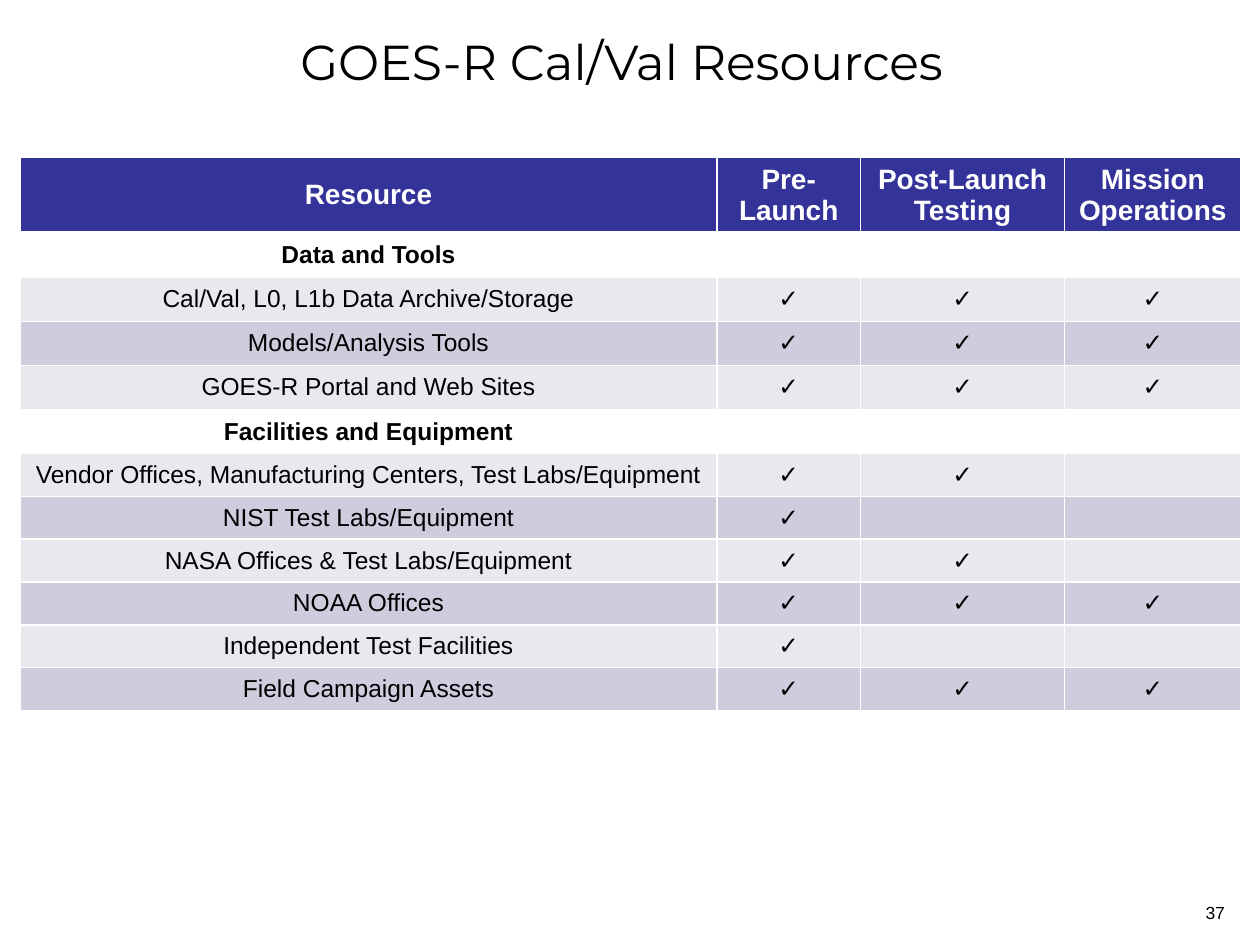
"""Build the GOES-R calibration and validation resources slide."""
from dataclasses import dataclass

from lxml import etree
from pptx import Presentation
from pptx.dml.color import RGBColor
from pptx.enum.text import MSO_ANCHOR, MSO_AUTO_SIZE, PP_ALIGN
from pptx.oxml.ns import qn
from pptx.util import Inches, Pt

CENTER, RIGHT = PP_ALIGN.CENTER, PP_ALIGN.RIGHT
MIDDLE, NO_AUTOFIT = MSO_ANCHOR.MIDDLE, MSO_AUTO_SIZE.NONE
TITLE_ONLY = 5

BLACK = RGBColor(0x00, 0x00, 0x00)
WHITE = RGBColor(0xFF, 0xFF, 0xFF)
NAVY = RGBColor(0x33, 0x33, 0x99)
PALE = RGBColor(0xE8, 0xE8, 0xEF)
LAVENDER = RGBColor(0xCD, 0xCD, 0xDE)

HEADINGS = ["Resource", "Pre-Launch", "Post-Launch Testing", "Mission Operations"]
COLUMN_WIDTHS = [5.53, 1.14, 1.62, 1.4]
ROW_HEIGHTS = [0.6] + [0.35] * 5 + [0.34] * 6
CHECK = "✓"


@dataclass(frozen=True)
class Resource:
    """One table row: its name and the number of phases it serves."""
    name: str
    phases: int = 0

    @property
    def is_section(self) -> bool:
        return self.phases == 0


RESOURCES = [
    Resource("Data and Tools"),
    Resource("Cal/Val, L0, L1b Data Archive/Storage", 3),
    Resource("Models/Analysis Tools", 3),
    Resource("GOES-R Portal and Web Sites", 3),
    Resource("Facilities and Equipment"),
    Resource("Vendor Offices, Manufacturing Centers, Test Labs/Equipment", 2),
    Resource("NIST Test Labs/Equipment", 1),
    Resource("NASA Offices & Test Labs/Equipment", 2),
    Resource("NOAA Offices", 3),
    Resource("Independent Test Facilities", 1),
    Resource("Field Campaign Assets", 3),
]


def write_text(frame, text: str, *, size: float, font: str = "Arial",
               color: RGBColor = BLACK, bold: bool = False, align=CENTER) -> None:
    """Put one formatted paragraph into a text frame."""
    para = frame.paragraphs[0]
    para.alignment = align
    if not text:
        etree.SubElement(para._p, qn("a:endParaRPr"), sz=str(int(size * 100)))
        return
    span = para.add_run()
    span.text = text
    span.font.name = font
    span.font.size = Pt(size)
    span.font.bold = bold
    span.font.color.rgb = color


def add_borders(cell, *, top: float = 1, bottom: float = 1) -> None:
    """Draw white borders around a cell, with widths in points."""
    properties = cell._tc.get_or_add_tcPr()
    for side, width in (("L", 1), ("R", 1), ("T", top), ("B", bottom)):
        line = etree.SubElement(properties, qn(f"a:ln{side}"), w=str(Pt(width)))
        fill = etree.SubElement(line, qn("a:solidFill"))
        etree.SubElement(fill, qn("a:srgbClr"), val=str(WHITE))


def fill_cell(cell, text: str, *, fill: RGBColor | None, top: float = 1,
              bottom: float = 1, **text_format) -> None:
    """Format a table cell and write its text."""
    add_borders(cell, top=top, bottom=bottom)
    if fill is None:
        cell.fill.background()
    else:
        cell.fill.solid()
        cell.fill.fore_color.rgb = fill
    cell.vertical_anchor = MIDDLE
    write_text(cell.text_frame, text, **text_format)


def add_resource_table(page) -> None:
    """Add the table of resources by mission phase."""
    table = page.shapes.add_table(
        len(ROW_HEIGHTS), len(COLUMN_WIDTHS), Inches(0.16), Inches(1.25),
        Inches(sum(COLUMN_WIDTHS)), Inches(sum(ROW_HEIGHTS))).table
    for column, width in zip(table.columns, COLUMN_WIDTHS):
        column.width = Inches(width)
    for row, height in zip(table.rows, ROW_HEIGHTS):
        row.height = Inches(height)

    for column, heading in enumerate(HEADINGS):
        fill_cell(table.cell(0, column), heading, fill=NAVY, bottom=3,
                  size=16, color=WHITE, bold=True)
    for row, resource in enumerate(RESOURCES, start=1):
        band = LAVENDER if row % 2 else PALE
        for column in range(len(HEADINGS)):
            mark = CHECK if column <= resource.phases else ""
            fill_cell(table.cell(row, column), mark if column else resource.name,
                      fill=None if resource.is_section else band,
                      top=3 if row == 1 else 1, size=14,
                      bold=resource.is_section or column > 0)


def add_title(page, text: str) -> None:
    """Place and format the slide title."""
    title = page.shapes.title
    title.left, title.top = Inches(1.51), Inches(0.07)
    title.width, title.height = Inches(6.95), Inches(0.82)
    title.text_frame.auto_size = NO_AUTOFIT
    title.text_frame.vertical_anchor = MIDDLE
    write_text(title.text_frame, text, size=28, font="Montserrat")


def add_page_number(page, number: str) -> None:
    """Write the page number at the bottom right."""
    box = page.shapes.add_textbox(Inches(7.49), Inches(7.11), Inches(2.33), Inches(0.39))
    box.text_frame.word_wrap = True
    write_text(box.text_frame, number, size=10, align=RIGHT)


def main() -> None:
    """Create and save the deck."""
    deck = Presentation()
    deck.slide_width, deck.slide_height = Inches(10), Inches(7.5)
    page = deck.slides.add_slide(deck.slide_layouts[TITLE_ONLY])
    add_title(page, "GOES-R Cal/Val Resources ")
    add_resource_table(page)
    add_page_number(page, "37")
    deck.save("out.pptx")


if __name__ == "__main__":
    main()
